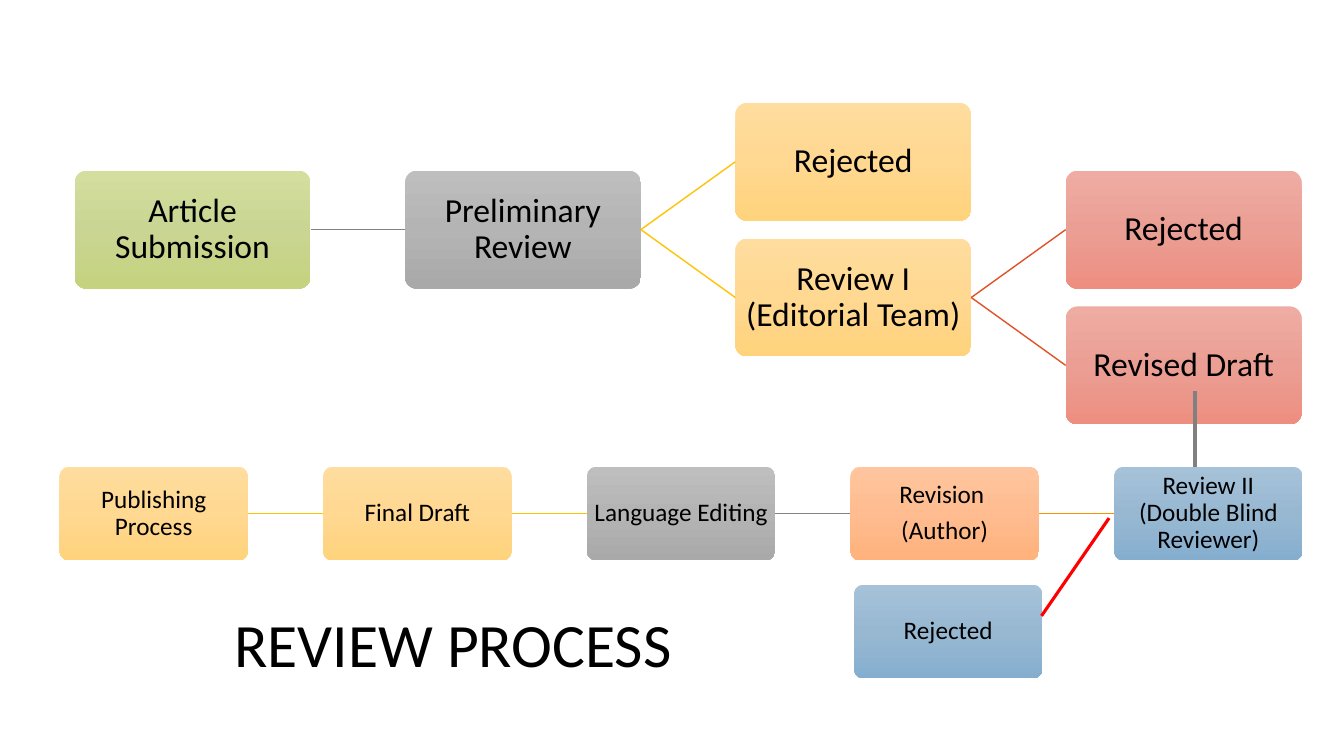
"""Build the review process flowchart slide."""
from dataclasses import dataclass

from lxml import etree
from pptx import Presentation
from pptx.dml.color import RGBColor
from pptx.enum.shapes import MSO_CONNECTOR, MSO_SHAPE
from pptx.enum.text import MSO_ANCHOR, PP_ALIGN
from pptx.oxml.ns import qn
from pptx.slide import Slide
from pptx.text.text import TextFrame
from pptx.util import Inches, Pt

ROUNDED = MSO_SHAPE.ROUNDED_RECTANGLE
STRAIGHT = MSO_CONNECTOR.STRAIGHT
MIDDLE = MSO_ANCHOR.MIDDLE
CENTER = PP_ALIGN.CENTER

FONT = "Calibri"
COLORS = {
    "text": "000000",
    "gray_line": "838383",
    "yellow_line": "FEC306",
    "red_line": "DF5327",
    "orange_line": "F69200",
    "resubmit_line": "808080",
    "reject_line": "FF0000",
}
GRADIENTS = {
    "green": ("D4DF9F", "C9D593", "C5D37E"),
    "gray": ("BEBEBE", "B4B4B4", "A9A9A9"),
    "yellow": ("FFDD9F", "FFD891", "FFD37C"),
    "red": ("EFACA2", "EB9F94", "ED8E80"),
    "blue": ("A6C2D8", "98B8D2", "85AECE"),
    "orange": ("FFC59E", "FFBC90", "FFB27C"),
}


@dataclass(frozen=True)
class BoxStyle:
    """Size, text size and inset shared by a row of boxes."""
    width: float
    height: float
    font_size: int
    inset: float


@dataclass(frozen=True)
class Box:
    """One step of the process."""
    text: str
    gradient: str
    left: float
    top: float
    style: BoxStyle

    @property
    def middle(self) -> float:
        """Return the vertical centre."""
        return self.top + self.style.height / 2

    @property
    def right(self) -> float:
        """Return the right edge."""
        return self.left + self.style.width


@dataclass(frozen=True)
class Line:
    """A straight line between two points."""
    x1: float
    y1: float
    x2: float
    y2: float
    color: str
    width: float = 1


LARGE = BoxStyle(2.34, 1.17, 24, 0.05)
SMALL = BoxStyle(1.87, 0.93, 18, 0.04)


def upper(text: str, gradient: str, column: int, level: int) -> Box:
    """Place a large box on the upper tree grid."""
    return Box(text, gradient, 0.74 + column * 9.83 / 3, 1.02 + level * 2.02 / 3, LARGE)


def lower(text: str, gradient: str, column: int) -> Box:
    """Place a small box on the lower row."""
    return Box(text, gradient, 0.59 + column * 10.46 / 4, 4.63, SMALL)


def link(a: Box, b: Box, color: str) -> Line:
    """Join the right side of one box to the left side of another."""
    return Line(a.right, a.middle, b.left, b.middle, color)


SUBMISSION = upper("Article Submission", "green", 0, 1)
PRELIMINARY = upper("Preliminary Review", "gray", 1, 1)
REJECTED_FIRST = upper("Rejected", "yellow", 2, 0)
REVIEW_ONE = upper("Review I (Editorial Team)", "yellow", 2, 2)
REJECTED_SECOND = upper("Rejected", "red", 3, 1)
REVISED = upper("Revised Draft", "red", 3, 3)
PUBLISHING = lower("Publishing Process", "yellow", 0)
FINAL = lower("Final Draft", "yellow", 1)
LANGUAGE = lower("Language Editing", "gray", 2)
REVISION = lower("Revision \n(Author)", "orange", 3)
REVIEW_TWO = lower("Review II (Double Blind Reviewer)", "blue", 4)
REJECTED_LAST = Box("Rejected", "blue", 8.47, 5.8, SMALL)

BOXES = (
    SUBMISSION, PRELIMINARY, REJECTED_FIRST, REVIEW_ONE, REJECTED_SECOND, REVISED,
    PUBLISHING, FINAL, LANGUAGE, REVISION, REVIEW_TWO, REJECTED_LAST,
)
LINES = (
    link(SUBMISSION, PRELIMINARY, "gray_line"),
    link(PRELIMINARY, REJECTED_FIRST, "yellow_line"),
    link(PRELIMINARY, REVIEW_ONE, "yellow_line"),
    link(REVIEW_ONE, REJECTED_SECOND, "red_line"),
    link(REVIEW_ONE, REVISED, "red_line"),
    link(PUBLISHING, FINAL, "yellow_line"),
    link(FINAL, LANGUAGE, "yellow_line"),
    link(LANGUAGE, REVISION, "gray_line"),
    link(REVISION, REVIEW_TWO, "orange_line"),
    Line(11.85, 3.88, 11.85, 4.63, "resubmit_line", 3),
    Line(10.33, 6.11, 11, 5.14, "reject_line", 2.25),
)


def write_text(tf: TextFrame, text: str, size: int) -> None:
    """Fill a text frame with centred paragraphs."""
    tf.word_wrap = True
    tf.vertical_anchor = MIDDLE
    tf.text = text
    for p in tf.paragraphs:
        p.alignment = CENTER
        p.line_spacing = 0.9
        p.space_before = Pt(0)
        p.font.name = FONT
        p.font.size = Pt(size)
        p.font.color.rgb = RGBColor.from_string(COLORS["text"])


def add_box(s: Slide, box: Box) -> None:
    """Draw one gradient box with its label."""
    style = box.style
    sp = s.shapes.add_shape(ROUNDED, Inches(box.left), Inches(box.top),
                            Inches(style.width), Inches(style.height))
    sp.adjustments[0] = 0.1
    sp.shadow.inherit = False
    sp.line.fill.background()
    sp.fill.gradient()
    sp.fill.gradient_angle = 270
    stops = next(sp._element.spPr.iter(qn("a:gsLst")))
    for stop in list(stops):
        stops.remove(stop)
    for i, color in enumerate(GRADIENTS[box.gradient]):
        stop = etree.SubElement(stops, qn("a:gs"), pos=str(i * 50000))
        etree.SubElement(stop, qn("a:srgbClr"), val=color)
    tf = sp.text_frame
    tf.margin_left = tf.margin_right = Inches(style.inset)
    tf.margin_top = tf.margin_bottom = Inches(style.inset)
    write_text(tf, box.text, style.font_size)
    for p in tf.paragraphs:
        p.space_after = Pt(style.font_size * 0.35)


def add_line(s: Slide, line: Line) -> None:
    """Draw one connecting line."""
    cxn = s.shapes.add_connector(STRAIGHT, Inches(line.x1), Inches(line.y1),
                                 Inches(line.x2), Inches(line.y2))
    cxn.line.color.rgb = RGBColor.from_string(COLORS[line.color])
    cxn.line.width = Pt(line.width)
    etree.SubElement(cxn._element.spPr, qn("a:effectLst"))


def main() -> None:
    """Build and save the slide."""
    prs = Presentation()
    prs.slide_width, prs.slide_height = Inches(13.33), Inches(7.5)
    s = prs.slides.add_slide(prs.slide_layouts[5])
    title = s.shapes.title
    title.left, title.top = Inches(0.48), Inches(5.97)
    title.width, title.height = Inches(8.03), Inches(0.91)
    write_text(title.text_frame, "REVIEW PROCESS", 44)
    for box in BOXES:
        add_box(s, box)
    for line in LINES:
        add_line(s, line)
    prs.save("out.pptx")


if __name__ == "__main__":
    main()
